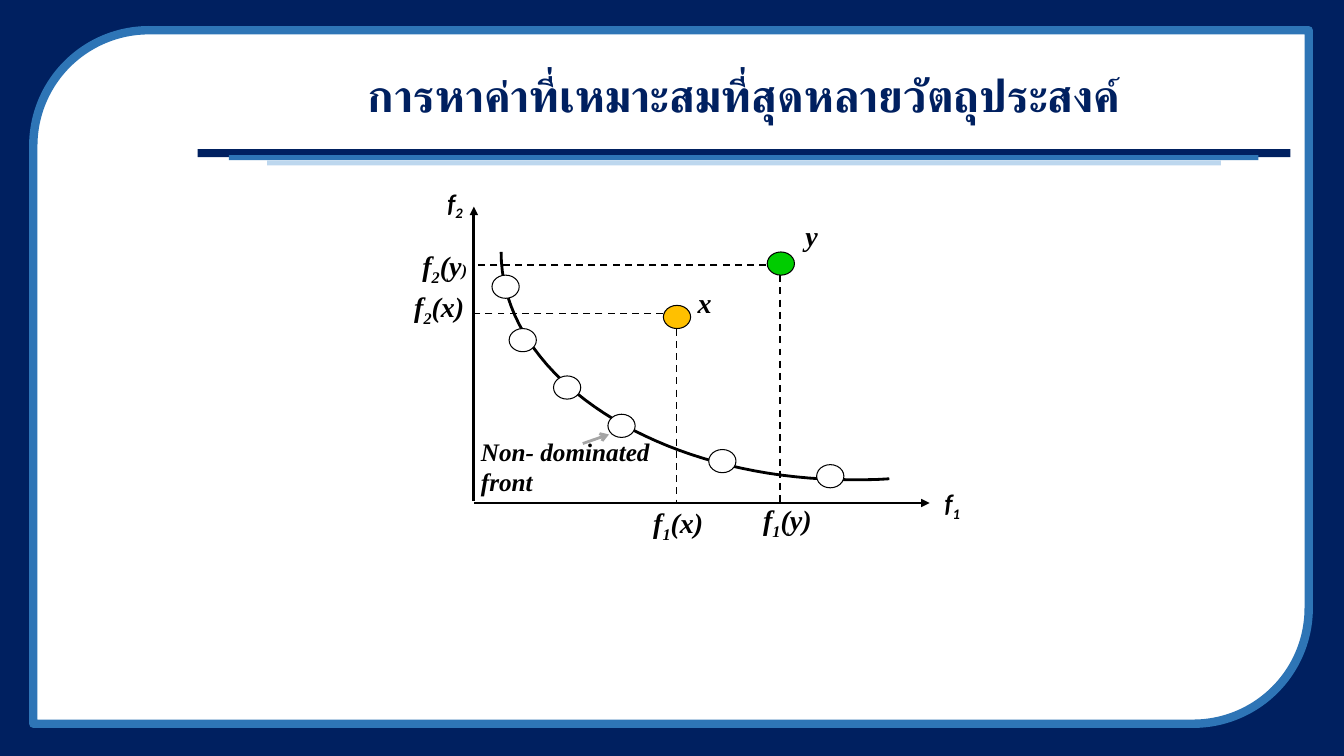
from lxml import etree
from pptx import Presentation
from pptx.dml.color import RGBColor
from pptx.enum import dml, shapes, text
from pptx.oxml.ns import qn
from pptx.util import Inches, Pt

NAVY, BLUE, PALE, WHITE, BLACK = "002060", "2E75B6", "BDD7EE", "FFFFFF", "000000"
SERIF = "Times New Roman"

presentation = Presentation()
presentation.slide_width = Inches(13.33)
presentation.slide_height = Inches(7.5)
slide = presentation.slides.add_slide(presentation.slide_layouts[6])


def color(value):
    return RGBColor.from_string(value)


def add_text(box, runs, font_name, size, font_color=BLACK, italic=True):
    left, top, width, height = box
    shape = slide.shapes.add_textbox(Inches(left), Inches(top), Inches(width), Inches(height))
    shape.text_frame.word_wrap = True
    paragraph = shape.text_frame.paragraphs[0]
    for words, baseline, run_size in runs:
        run = paragraph.add_run()
        run.text = words
        run.font.name = font_name
        run.font.size = Pt(run_size or size)
        run.font.bold = True
        run.font.italic = italic
        run.font.color.rgb = color(font_color)
        properties = run._r.get_or_add_rPr()
        etree.SubElement(properties, qn("a:cs"), typeface=font_name)
        if baseline:
            properties.set("baseline", str(baseline))
    return shape


rectangle = shapes.MSO_SHAPE.RECTANGLE
frame_parts = [
    (rectangle, 0, 0, 13.33, 7.5, NAVY, None),
    (shapes.MSO_SHAPE.ROUND_2_DIAG_RECTANGLE, 0.33, 0.3, 12.65, 6.88, WHITE, (BLUE, 6)),
    (rectangle, 1.96, 1.48, 10.84, 0.08, NAVY, None),
    (rectangle, 2.27, 1.54, 10.21, 0.05, BLUE, None),
    (rectangle, 2.65, 1.59, 9.46, 0.05, PALE, None),
]
points = [
    (4.88, 2.73, WHITE), (5.05, 3.26, WHITE), (5.49, 3.73, WHITE),
    (6.03, 4.11, WHITE), (7.03, 4.46, WHITE), (8.1, 4.61, WHITE),
    (6.58, 3.03, "FFC000"), (7.61, 2.5, "00CC00"),
]
point_parts = [
    (shapes.MSO_SHAPE.FLOWCHART_CONNECTOR, left, top, 0.27, 0.23, fill, (BLACK, 0.75))
    for left, top, fill in points
]

front_pieces = [
    [(4.97, 2.5), (4.97, 3.75), (6.53, 4.76), (8.45, 4.76)],
    [(8.45, 4.76), (8.57, 4.76), (8.7, 4.76), (8.82, 4.75)],
]
steps = 40
front = []
for piece in front_pieces:
    for step in range(1, steps + 1):
        t = step / steps
        weights = ((1 - t) ** 3, 3 * t * (1 - t) ** 2, 3 * t ** 2 * (1 - t), t ** 3)
        front.append(tuple(
            Inches(sum(weight * point[axis] for weight, point in zip(weights, piece)))
            for axis in (0, 1)
        ))

for kind, left, top, width, height, fill, outline in frame_parts + point_parts:
    if kind == shapes.MSO_SHAPE.FLOWCHART_CONNECTOR and front:
        builder = slide.shapes.build_freeform(Inches(4.97), Inches(2.5))
        builder.add_line_segments(front, close=False)
        curve = builder.convert_to_shape()
        curve.shadow.inherit = False
        curve.fill.background()
        curve.line.color.rgb = color(BLACK)
        curve.line.width = Pt(2)
        front = []
    shape = slide.shapes.add_shape(kind, Inches(left), Inches(top), Inches(width), Inches(height))
    shape.shadow.inherit = False
    shape.fill.solid()
    shape.fill.fore_color.rgb = color(fill)
    if outline:
        shape.line.color.rgb = color(outline[0])
        shape.line.width = Pt(outline[1])
    else:
        shape.line.fill.background()

lines = [
    (4.7, 4.99, 9.22, 4.99, BLACK, 2, "triangle"),
    (4.7, 4.97, 4.7, 2.05, BLACK, 2, "triangle"),
    (7.74, 2.73, 7.74, 4.99, BLACK, 1.25, None),
    (6.71, 3.26, 6.71, 4.99, BLACK, 1.25, None),
    (7.6, 2.63, 4.7, 2.63, BLACK, 1.25, None),
    (6.58, 3.11, 4.7, 3.11, BLACK, 1.25, None),
    (5.78, 4.4, 6.04, 4.31, "A5A5A5", 2, "arrow"),
]
for x1, y1, x2, y2, line_color, width, arrow in lines:
    connector = slide.shapes.add_connector(
        shapes.MSO_CONNECTOR.STRAIGHT, Inches(x1), Inches(y1), Inches(x2), Inches(y2))
    connector.line.color.rgb = color(line_color)
    connector.line.width = Pt(width)
    if arrow:
        etree.SubElement(connector.line._get_or_add_ln(), qn("a:tailEnd"), type=arrow)
    else:
        connector.line.dash_style = dml.MSO_LINE.DASH
    etree.SubElement(connector._element.spPr, qn("a:effectLst"))

title = add_text((1.96, 0.49, 10.84, 0.97),
                 [("การหาค่าที่เหมาะสมที่สุดหลายวัตถุประสงค์", 0, None)],
                 "Arial", 32, NAVY, italic=False)
title.text_frame.vertical_anchor = text.MSO_ANCHOR.MIDDLE
title.text_frame.paragraphs[0].alignment = text.PP_ALIGN.CENTER
title.text_frame.paragraphs[0].line_spacing = 0.9

front_label = add_text((4.17, 4.28, 2.81, 0.75), [("Non- dominated front", 0, None)], SERIF, 18)
front_label.text_frame.margin_left = Inches(0.6)

labels = [
    ((4.09, 2.42, 0.81, 0.45), ["f", "2", "(y", ")"], SERIF, 20),
    ((4.01, 2.82, 0.83, 0.45), ["f", "2", "(x)"], SERIF, 20),
    ((6.38, 4.97, 0.81, 0.38), ["f", "1", "(x)"], SERIF, 20),
    ((7.47, 4.94, 0.8, 0.4), ["f", "1", "(y)"], SERIF, 20),
    ((6.82, 2.78, 0.41, 0.6), ["x"], SERIF, 20),
    ((7.89, 2.12, 0.39, 0.6), ["y"], SERIF, 20),
    ((9.27, 4.79, 0.54, 0.6), ["f", "1"], "Calibri", 18),
    ((4.34, 1.81, 0.54, 0.6), ["f", "2"], "Calibri", 18),
]
for box, parts, font_name, size in labels:
    runs = [(part, -25000 if part.isdigit() else 0, 12 if part == ")" else None)
            for part in parts]
    add_text(box, runs, font_name, size)

presentation.save("out.pptx")
